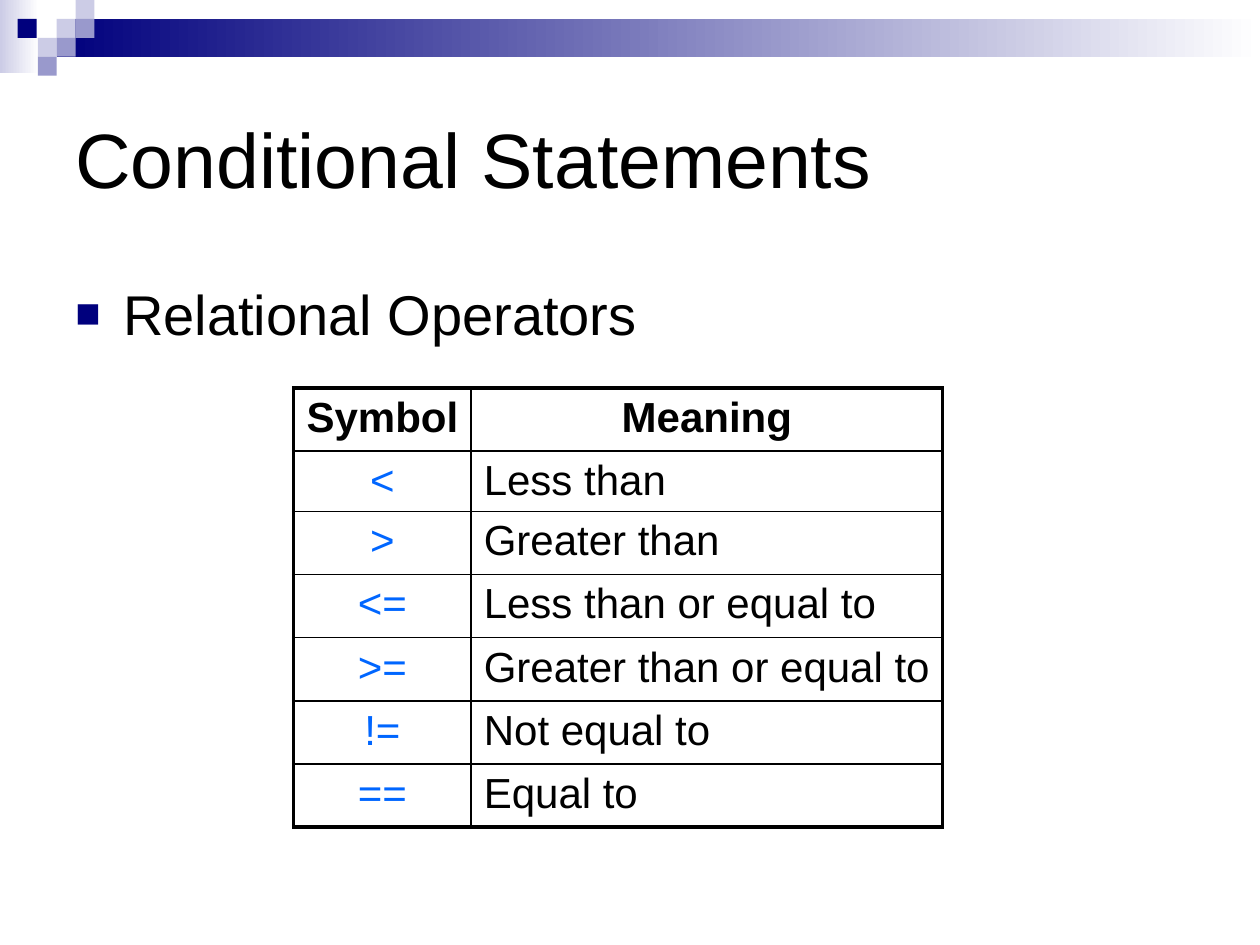
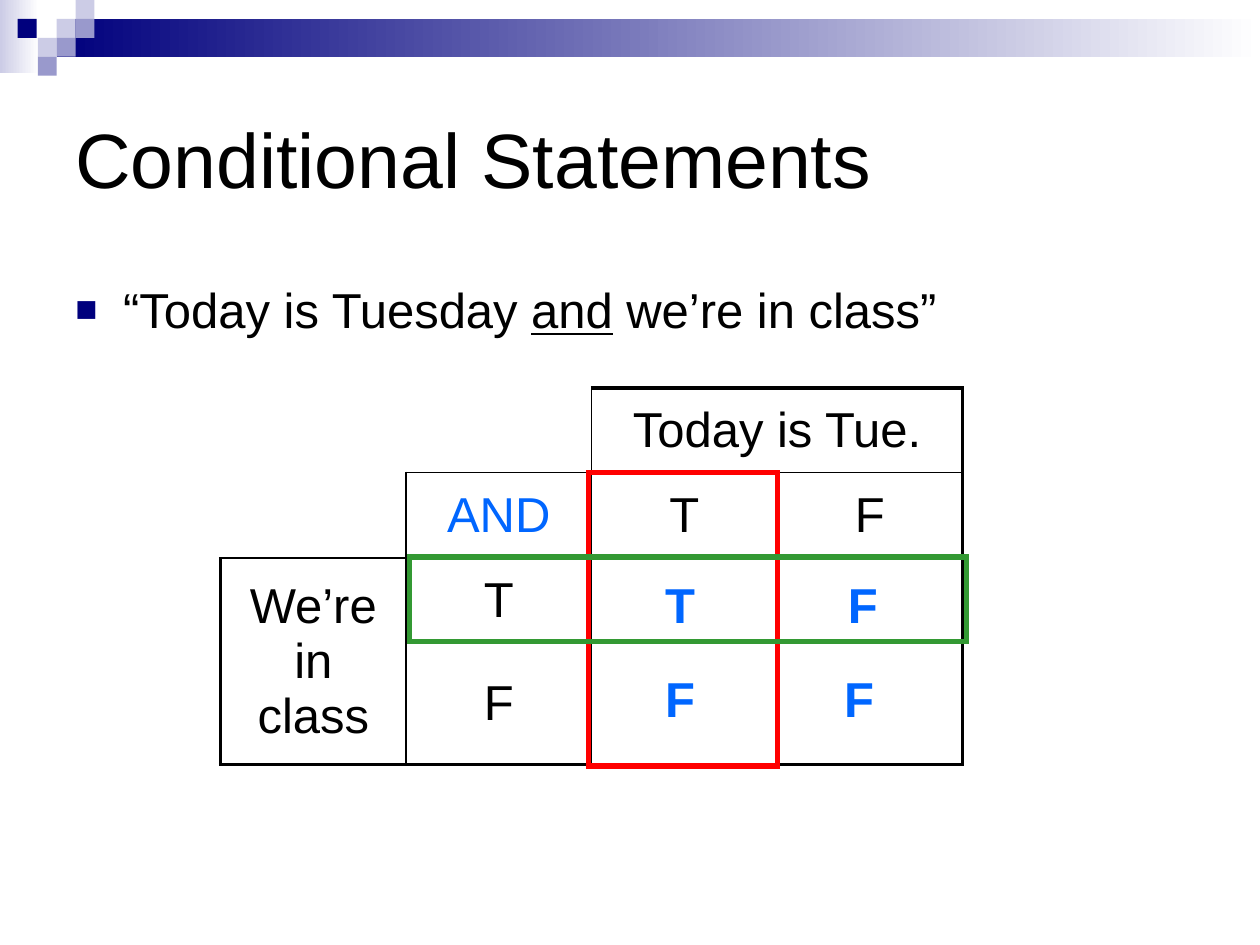
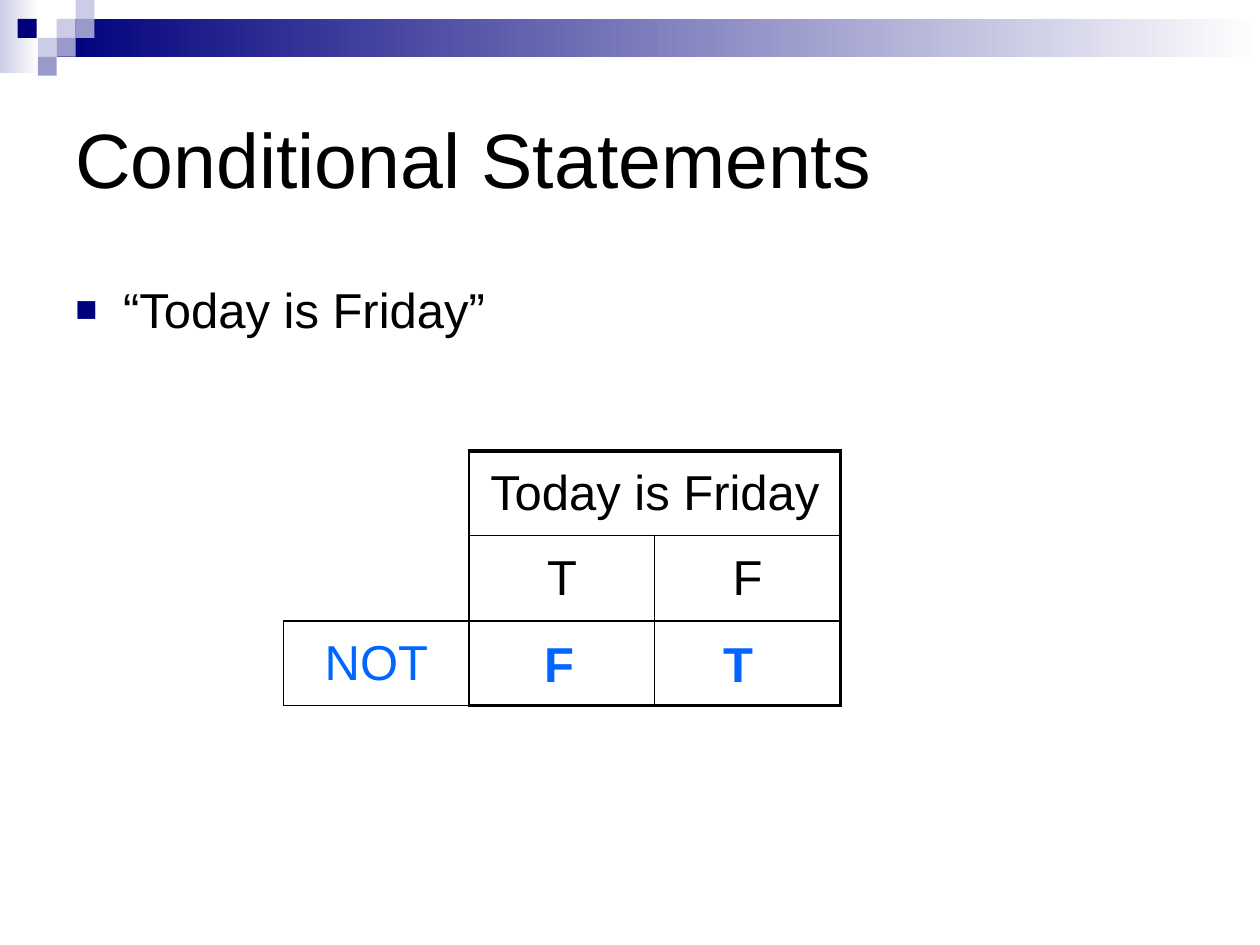
from lxml.etree import SubElement
from pptx import Presentation
from pptx.dml.color import RGBColor
from pptx.enum.shapes import MSO_SHAPE as Preset
from pptx.enum.text import MSO_ANCHOR as Anchor, PP_ALIGN as Align
from pptx.oxml.ns import qn
from pptx.util import Inches, Pt

FONT = "Arial"
BLACK = RGBColor(0x00, 0x00, 0x00)
WHITE = RGBColor(0xFF, 0xFF, 0xFF)
NAVY = RGBColor(0x00, 0x00, 0x7D)
LAVENDER = RGBColor(0xCC, 0xCC, 0xE6)
PERIWINKLE = RGBColor(0x99, 0x99, 0xCC)
BLUE = RGBColor(0x00, 0x66, 0xFF)
RED = RGBColor(0xFF, 0x00, 0x00)
GREEN = RGBColor(0x33, 0x99, 0x33)

TITLE = "Conditional Statements"
THIN, THICK = 1, 2.25
NO_STYLE = "{2D5ABB26-0587-4C30-8999-92F81FD0307C}"

# Header decoration: bands are (left, top, width, height, colour fading to white)
BANDS = [(0, 0, 0.31, 0.58, LAVENDER), (0.45, 0.15, 9.55, 0.3, NAVY)]
SQUARE = 0.15
SQUARES = [
    (0.45, 0.15, LAVENDER), (0.6, 0, LAVENDER), (0.6, 0.15, PERIWINKLE),
    (0.3, 0.3, LAVENDER), (0.14, 0.15, NAVY), (0.45, 0.3, PERIWINKLE),
    (0.3, 0.45, PERIWINKLE),
]

# Table cells: None is an undrawn cell, "" an empty cell with borders.
# Spans are {(row, column): (rows, columns)}; bullet runs are (text, underlined).
SLIDES = [
    {
        "bullet": [("Relational Operators", False)], "bullet_size": 32,
        "table": {
            "at": (2.33, 3.08), "columns": [1.41, 3.74],
            "rows": [0.5, 0.42] + [0.5] * 5,
            "cells": [
                ["Symbol", "Meaning"],
                ["<", "Less than"],
                [">", "Greater than"],
                ["<=", "Less than or equal to"],
                [">=", "Greater than or equal to"],
                ["!=", "Not equal to"],
                ["==", "Equal to"],
            ],
            "size": 24, "anchor": Anchor.TOP, "header": True, "tight_row": 1,
            "blue": {"<", ">", "<=", ">=", "!=", "=="},
        },
    },
    {
        "bullet": [("“Today is Tuesday ", False), ("and", True),
                   (" we’re in class”", False)],
        "bullet_size": 28,
        "table": {
            "at": (1.75, 3.08), "columns": [5.89 / 4] * 4,
            "rows": [0.67, 0.68, 0.67, 0.97],
            "cells": [
                [None, None, "Today is Tue.", None],
                [None, "AND", "T", "F"],
                ["We’re in class", "T", "", ""],
                [None, "F", "", ""],
            ],
            "spans": {(0, 2): (1, 2), (2, 0): (2, 1)},
            "blue": {"AND"},
        },
        "answers": [("T", 5.18, 4.51), ("F", 6.63, 4.51),
                    ("F", 5.18, 5.26), ("F", 6.6, 5.26)],
        "frames": [(4.67, 3.75, 1.5, 2.33, RED), (3.25, 4.42, 4.42, 0.67, GREEN)],
    },
    {
        "bullet": [("“Today is Friday”", False)], "bullet_size": 28,
        "table": {
            "at": (2.25, 3.58), "columns": [4.42 / 3] * 3,
            "rows": [0.67, 0.68, 0.67],
            "cells": [
                [None, "Today is Friday", None],
                [None, "T", "F"],
                ["NOT", "", ""],
            ],
            "spans": {(0, 1): (1, 2)},
            "blue": {"NOT"}, "all_thin": {(2, 0)},
        },
        "answers": [("T", 5.64, 4.98), ("F", 4.22, 4.98)],
    },
]


def add_run(paragraph, text, size, color=BLACK, bold=False, underline=False):
    run = paragraph.add_run()
    run.text = text
    font = run.font
    font.name, font.size, font.bold = FONT, Pt(size), bold
    font.underline = underline
    font.color.rgb = color


def space_before(paragraph):
    """Leave 20 % above the paragraph."""
    properties = paragraph._p.get_or_add_pPr()
    spacing = SubElement(properties, qn("a:spcBef"))
    SubElement(spacing, qn("a:spcPct"), val="20000")
    return properties


def add_text_box(slide, left, top, width, height):
    box = slide.shapes.add_textbox(*map(Inches, (left, top, width, height)))
    box.text_frame.word_wrap = True
    return box.text_frame


def add_rectangle(slide, left, top, width, height):
    shape = slide.shapes.add_shape(
        Preset.RECTANGLE, *map(Inches, (left, top, width, height)))
    shape.shadow.inherit = False
    return shape


def add_header(slide):
    for *box, color in BANDS:
        band = add_rectangle(slide, *box)
        band.line.fill.background()
        band.fill.gradient()
        band.fill.gradient_angle = 0
        for stop, stop_color, position in zip(
                band.fill.gradient_stops, (color, WHITE), (0, 1)):
            stop.color.rgb = stop_color
            stop.position = position
    for left, top, color in SQUARES:
        square = add_rectangle(slide, left, top, SQUARE, SQUARE)
        square.line.fill.background()
        square.fill.solid()
        square.fill.fore_color.rgb = color


def add_title(slide):
    frame = add_text_box(slide, 0.5, 0.5, 9, 1.5)
    frame.vertical_anchor = Anchor.MIDDLE
    add_run(frame.paragraphs[0], TITLE, 44)


def add_bullet(slide, runs, size):
    paragraph = add_text_box(slide, 0.5, 2.17, 8.67, 4.25).paragraphs[0]
    properties = space_before(paragraph)
    properties.set("marL", str(Inches(0.38)))
    properties.set("indent", str(-Inches(0.38)))
    bullet_color = SubElement(properties, qn("a:buClr"))
    SubElement(bullet_color, qn("a:srgbClr"), val=str(NAVY))
    SubElement(properties, qn("a:buSzPct"), val="75000")
    SubElement(properties, qn("a:buFont"), typeface=FONT)
    SubElement(properties, qn("a:buChar"), char="■")
    for text, underline in runs:
        add_run(paragraph, text, size, underline=underline)


def add_border(cell, side, width):
    properties = cell._tc.get_or_add_tcPr()
    line = SubElement(properties, qn(f"a:ln{side}"), w=str(Pt(width)))
    fill = SubElement(line, qn("a:solidFill"))
    SubElement(fill, qn("a:srgbClr"), val=str(BLACK))


def draw_borders(table, row, column, span, all_thin):
    """Outline a cell or span, with thick lines on the table's edge."""
    on_table_edge = {
        "L": column == 0,
        "R": column + span[1] == len(table.columns),
        "T": row == 0,
        "B": row + span[0] == len(table.rows),
    }
    for side, on_edge in on_table_edge.items():
        add_border(table.cell(row, column), side,
                   THICK if on_edge and not all_thin else THIN)


def fill_cell(cell, text, row, column, data):
    header = data.get("header", False)
    paragraph = cell.text_frame.paragraphs[0]
    left_aligned = header and row > 0 and column > 0
    paragraph.alignment = Align.LEFT if left_aligned else Align.CENTER
    space_before(paragraph)
    cell.vertical_anchor = data.get("anchor", Anchor.MIDDLE)
    if row == data.get("tight_row"):
        cell.margin_bottom = Inches(0.03)
    add_run(paragraph, text, data.get("size", 28),
            BLUE if text in data["blue"] else BLACK, bold=header and row == 0)


def add_grid(slide, data):
    columns, rows = data["columns"], data["rows"]
    table = slide.shapes.add_table(
        len(rows), len(columns),
        *map(Inches, (*data["at"], sum(columns), sum(rows)))).table
    table.first_row = table.horz_banding = False
    table._tbl.tblPr.find(qn("a:tableStyleId")).text = NO_STYLE
    for column, width in zip(table.columns, columns):
        column.width = Inches(width)
    for row, height in zip(table.rows, rows):
        row.height = Inches(height)

    spans = data.get("spans", {})
    for (row, column), (height, width) in spans.items():
        table.cell(row, column).merge(
            table.cell(row + height - 1, column + width - 1))
    for r, texts in enumerate(data["cells"]):
        for c, text in enumerate(texts):
            if text is not None:
                draw_borders(table, r, c, spans.get((r, c), (1, 1)),
                             (r, c) in data.get("all_thin", ()))
            if text:
                fill_cell(table.cell(r, c), text, r, c, data)
    for cell in table.iter_cells():
        cell.fill.background()


def add_answer(slide, text, left, top):
    paragraph = add_text_box(slide, left, top, 0.52, 0.57).paragraphs[0]
    space_before(paragraph)
    add_run(paragraph, text, 28, BLUE, bold=True)


def add_frame(slide, left, top, width, height, color):
    frame = add_rectangle(slide, left, top, width, height)
    frame.fill.background()
    frame.line.color.rgb = color
    frame.line.width = Pt(3)
    # Square corners
    SubElement(frame.line._get_or_add_ln(), qn("a:miter"), lim="800000")


def main():
    presentation = Presentation()
    presentation.slide_width, presentation.slide_height = Inches(10), Inches(7.5)
    for content in SLIDES:
        slide = presentation.slides.add_slide(presentation.slide_layouts[6])
        add_header(slide)
        add_title(slide)
        add_bullet(slide, content["bullet"], content["bullet_size"])
        add_grid(slide, content["table"])
        for answer in content.get("answers", []):
            add_answer(slide, *answer)
        for frame in content.get("frames", []):
            add_frame(slide, *frame)
    presentation.save("out.pptx")


if __name__ == "__main__":
    main()
